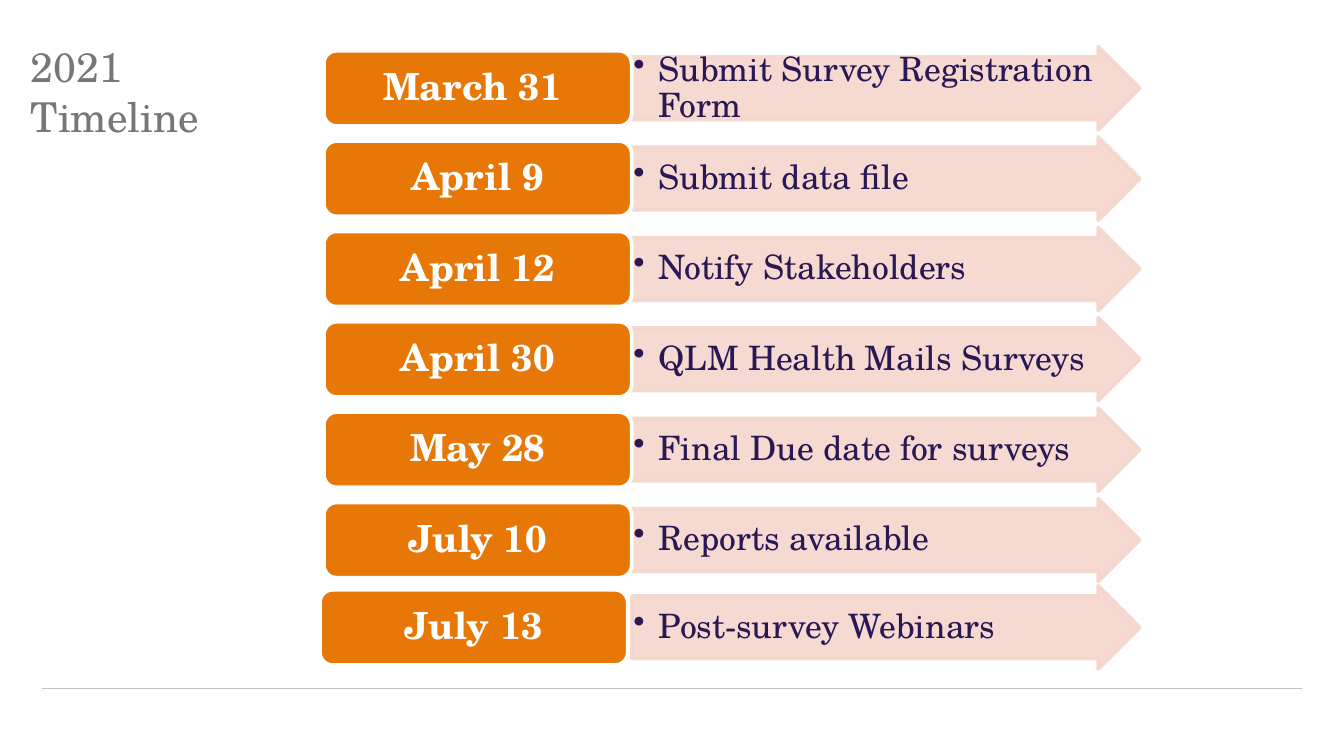
from lxml import etree
from pptx import Presentation
from pptx.dml.color import RGBColor
from pptx.enum.shapes import MSO_CONNECTOR, MSO_SHAPE
from pptx.enum.text import MSO_ANCHOR, PP_ALIGN
from pptx.oxml.ns import qn
from pptx.util import Pt

FONT = "TeX Gyre Schola"
GRAY = RGBColor(0x75, 0x78, 0x7B)
RULE = RGBColor(0xC7, 0xC1, 0xB9)
PINK = RGBColor(0xF6, 0xD6, 0xCC)
ORANGE = RGBColor(0xE7, 0x77, 0x07)
PURPLE = RGBColor(0x2A, 0x18, 0x55)
WHITE = RGBColor(0xFF, 0xFF, 0xFF)

MILESTONES = [
    ("March 31 ", "Submit Survey Registration Form"),
    ("April 9", "Submit data file"),
    ("April 12", "Notify Stakeholders"),
    ("April 30", "QLM Health Mails Surveys"),
    ("May 28", "Final Due date for surveys"),
    ("July 10", "Reports available"),
    ("July 13", "Post-survey Webinars"),
]
ROW_PITCH = 48.4


def set_text(shape, text, size, color, align, margins, anchor=MSO_ANCHOR.MIDDLE,
             spacing=0.9, bold=False):
    text_frame = shape.text_frame
    text_frame.word_wrap = True
    text_frame.vertical_anchor = anchor
    text_frame.margin_left = text_frame.margin_right = Pt(margins[0])
    text_frame.margin_top = text_frame.margin_bottom = Pt(margins[1])
    paragraph = text_frame.paragraphs[0]
    paragraph.text = text
    paragraph.alignment = align
    paragraph.line_spacing = spacing
    for run in paragraph.runs:
        run.font.name = FONT
        run.font.size = Pt(size)
        run.font.bold = bold
        run.font.color.rgb = color
    return paragraph


def add_block(kind, left, top, width, height, fill, line):
    shape = slide.shapes.add_shape(kind, Pt(left), Pt(top), Pt(width), Pt(height))
    shape.shadow.inherit = False
    shape.fill.solid()
    shape.fill.fore_color.rgb = fill
    shape.line.color.rgb = line
    shape.line.width = Pt(2)
    return shape


presentation = Presentation()
presentation.slide_width = Pt(720)
presentation.slide_height = Pt(405)
slide = presentation.slides.add_slide(presentation.slide_layouts[5])

# Title
title = slide.shapes.title
title.left, title.top, title.width, title.height = Pt(11.5), Pt(19.4), Pt(697), Pt(67.7)
set_text(title, "2021\vTimeline", 22, GRAY, PP_ALIGN.LEFT, (5, 3),
         anchor=MSO_ANCHOR.TOP, spacing=1.0)

# Footer rule
rule = slide.shapes.add_connector(
    MSO_CONNECTOR.STRAIGHT, Pt(697.7), Pt(368.8), Pt(22.3), Pt(368.8))
rule.line.color.rgb = RULE
rule.line.width = Pt(0.75)
etree.SubElement(rule._element.spPr, qn("a:effectLst"))

# Timeline rows: task arrow and date box
for row, (date, task) in enumerate(MILESTONES):
    # The last row sits slightly higher, its date box further left
    is_last = row == len(MILESTONES) - 1
    arrow_top = 25 + row * ROW_PITCH - (1.6 if is_last else 0)
    box_left = 171.4 if is_last else 173.5

    arrow = add_block(MSO_SHAPE.RIGHT_ARROW, 338.4, arrow_top, 272.2, 44.6, PINK, PINK)
    arrow.adjustments[0] = 0.75
    arrow.adjustments[1] = 0.5
    for color in arrow._element.spPr.iter(qn("a:srgbClr")):
        etree.SubElement(color, qn("a:alpha"), val="90000")
    paragraph = set_text(arrow, task, 18, PURPLE, PP_ALIGN.LEFT, (0.9, 0.9))
    properties = paragraph._p.get_or_add_pPr()
    properties.set("marL", str(Pt(13.5)))
    properties.set("indent", str(Pt(-13.5)))
    etree.SubElement(properties, qn("a:buChar"), char="•")

    box = add_block(MSO_SHAPE.ROUNDED_RECTANGLE, box_left, arrow_top + 2.2,
                    164.9, 40.3, ORANGE, WHITE)
    set_text(box, date, 20, WHITE, PP_ALIGN.CENTER, (6, 3), bold=True)

presentation.save("out.pptx")
